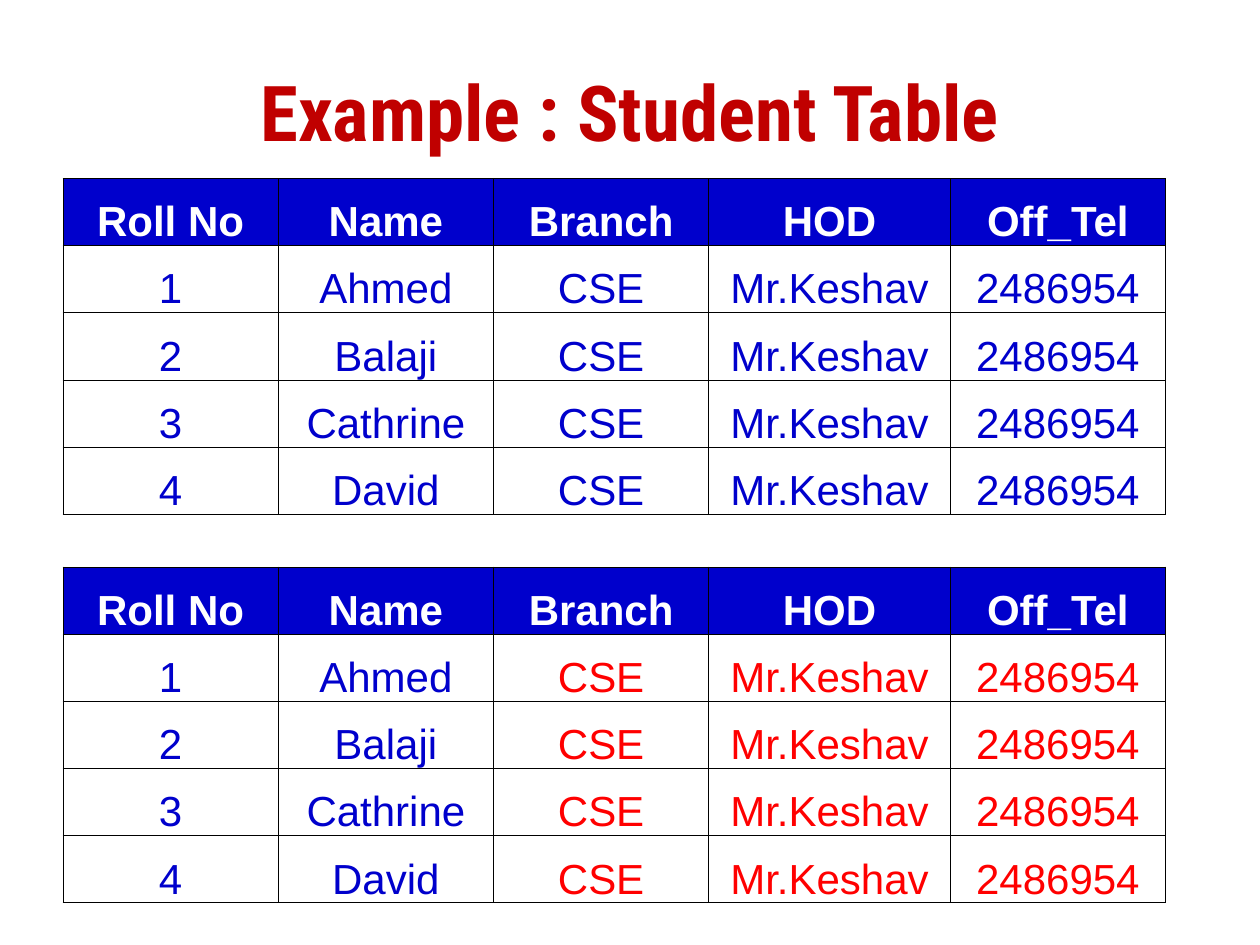
"""Build a slide comparing two versions of a student table."""

from dataclasses import dataclass

from lxml import etree
from pptx import Presentation
from pptx.dml.color import RGBColor
from pptx.enum.text import MSO_ANCHOR, PP_ALIGN
from pptx.oxml.ns import qn
from pptx.util import Pt

CENTER = PP_ALIGN.CENTER
MIDDLE = MSO_ANCHOR.MIDDLE
BOTTOM = MSO_ANCHOR.BOTTOM
TITLE_ONLY = 5

COLORS = {
    "title": "C00000",
    "blue": "0000CC",
    "red": "FF0000",
    "white": "FFFFFF",
    "border": "000000",
}
HEADERS = ["Roll No", "Name", "Branch", "HOD", "Off_Tel"]
STUDENTS = ["Ahmed", "Balaji", "Cathrine", "David"]
DEPARTMENT = ["CSE", "Mr.Keshav", "2486954"]
ROWS = [HEADERS] + [
    [str(number), name, *DEPARTMENT] for number, name in enumerate(STUDENTS, 1)
]
COLUMN_WIDTHS = [123, 123, 123, 138, 123]
ROW_HEIGHT = 38.4
TABLE_LEFT = 36


@dataclass
class StudentTable:
    top: float
    department_color: str


@dataclass
class TextStyle:
    font: str
    size: float
    color: str
    bold: bool


TABLES = [StudentTable(102, "blue"), StudentTable(324, "red")]
TITLE_STYLE = TextStyle("Roboto Condensed", 44, "title", True)


def add_span(para, text: str, style: TextStyle) -> None:
    para.alignment = CENTER
    span = para.add_run()
    span.text = text
    span.font.name = style.font
    span.font.size = Pt(style.size)
    span.font.bold = style.bold
    span.font.color.rgb = RGBColor.from_string(COLORS[style.color])


def add_borders(cell) -> None:
    properties = cell._tc.get_or_add_tcPr()
    for side in ("a:lnL", "a:lnR", "a:lnT", "a:lnB"):
        line = etree.SubElement(properties, qn(side), w=str(Pt(0.5)))
        fill = etree.SubElement(line, qn("a:solidFill"))
        etree.SubElement(fill, qn("a:srgbClr"), val=COLORS["border"])


def format_cell(cell, text: str, color: str, is_header: bool) -> None:
    add_borders(cell)
    if is_header:
        cell.fill.solid()
        cell.fill.fore_color.rgb = RGBColor.from_string(COLORS["blue"])
    else:
        cell.fill.background()
    cell.vertical_anchor = BOTTOM
    cell.margin_left = cell.margin_right = cell.margin_top = Pt(0.75)
    cell.margin_bottom = Pt(0)
    para = cell.text_frame.paragraphs[0]
    para.space_before = Pt(4.8)
    add_span(para, text, TextStyle("Arial", 24, color, is_header))


def add_student_table(page, student_table: StudentTable) -> None:
    table = page.shapes.add_table(
        len(ROWS),
        len(HEADERS),
        Pt(TABLE_LEFT),
        Pt(student_table.top),
        Pt(sum(COLUMN_WIDTHS)),
        Pt(ROW_HEIGHT * len(ROWS)),
    ).table
    table.horz_banding = False
    for column, width in zip(table.columns, COLUMN_WIDTHS):
        column.width = Pt(width)
    first_department_column = len(HEADERS) - len(DEPARTMENT)
    for row_index, values in enumerate(ROWS):
        table.rows[row_index].height = Pt(ROW_HEIGHT)
        is_header = row_index == 0
        for column_index, text in enumerate(values):
            if is_header:
                color = "white"
            elif column_index >= first_department_column:
                color = student_table.department_color
            else:
                color = "blue"
            format_cell(table.cell(row_index, column_index), text, color, is_header)


def add_title(page, text: str) -> None:
    box = page.shapes.title
    box.left, box.top, box.width, box.height = Pt(54), Pt(18), Pt(612), Pt(90)
    box.text_frame.vertical_anchor = MIDDLE
    add_span(box.text_frame.paragraphs[0], text, TITLE_STYLE)


def main() -> None:
    deck = Presentation()
    deck.slide_width, deck.slide_height = Pt(720), Pt(540)
    page = deck.slides.add_slide(deck.slide_layouts[TITLE_ONLY])
    add_title(page, "Example : Student Table")
    for student_table in TABLES:
        add_student_table(page, student_table)
    deck.save("out.pptx")


if __name__ == "__main__":
    main()
